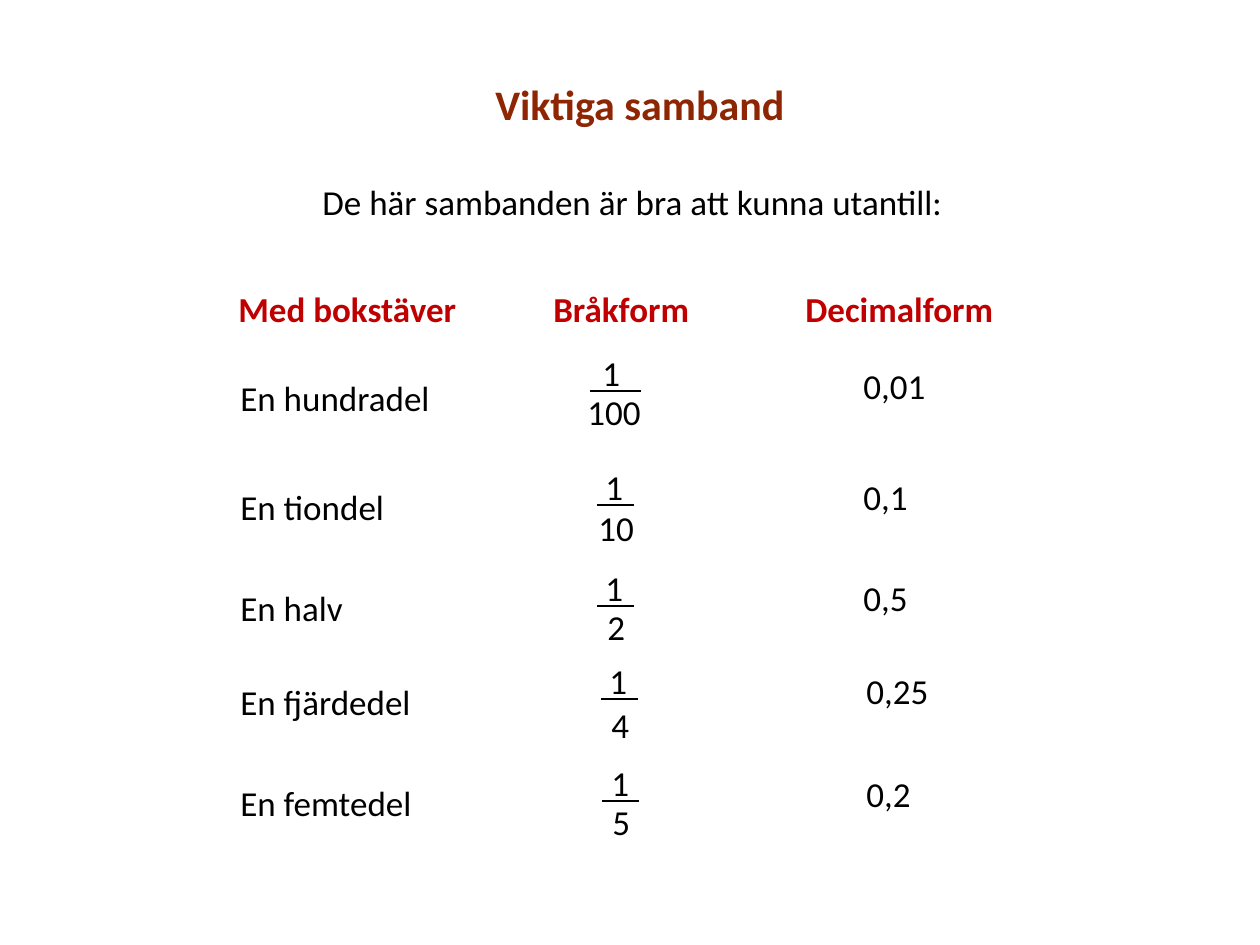
"""Build a slide relating words, fractions and decimals."""
from lxml.etree import SubElement
from pptx import Presentation
from pptx.dml.color import RGBColor
from pptx.enum.shapes import MSO_CONNECTOR
from pptx.enum.text import MSO_AUTO_SIZE
from pptx.oxml.ns import qn
from pptx.util import Inches, Pt

BLACK = RGBColor(0, 0, 0)
BROWN = RGBColor(0x8E, 0x25, 0x03)
RED = RGBColor(0xC0, 0, 0)
PX = Inches(1) / 126
TEXT_HEIGHT = 55
NAME_LEFT = 228
NUMERATOR_RISE = 46

HEADINGS = [
    ("Viktiga samband", (483, 72, 329, 63), 24, BROWN, True),
    ("De här sambanden är bra att kunna utantill:", (310, 174, 673, TEXT_HEIGHT), 20, BLACK, False),
    ("Med bokstäver\t\tBråkform \t\tDecimalform", (226, 281, 832, TEXT_HEIGHT), 20, RED, True),
]

# fmt: off
ROWS = [
    {"name": ("En hundradel", 370), "bar": (590, 391, 51), "numerator": ("1", 590),
     "denominator": ("100", 575, 384), "decimal": ("0,01", 851, 358)},
    {"name": ("En tiondel", 479), "bar": (597, 505, 37), "numerator": ("1", 593),
     "denominator": ("10", 586, 500), "decimal": ("0,1", 851, 469)},
    {"name": ("En halv", 580), "bar": (597, 606, 37), "numerator": ("1", 593),
     "denominator": ("2", 595, 599), "decimal": ("0,5", 851, 570)},
    {"name": ("En fjärdedel", 674), "bar": (601, 699, 37), "numerator": ("1", 597),
     "denominator": ("4", 599, 697), "decimal": ("0,25", 854, 663)},
    {"name": ("En femtedel", 775), "bar": (602, 801, 37), "numerator": ("1", 599),
     "denominator": ("5", 600, 794), "decimal": ("0,2", 854, 766)},
]
# fmt: on


def emu(*lengths):
    return [round(length * PX) for length in lengths]


def add_text(shapes, text, box, size=20, color=BLACK, bold=False):
    frame = shapes.add_textbox(*emu(*box)).text_frame
    frame.word_wrap = True
    frame.auto_size = MSO_AUTO_SIZE.SHAPE_TO_FIT_TEXT
    paragraph = frame.paragraphs[0]
    paragraph.text = text
    font = paragraph.font
    font.name, font.size, font.bold = "Calibri", Pt(size), bold
    font.color.rgb = color


def add_fraction(slide, numerator, denominator, bar):
    shapes = slide.shapes.add_group_shape().shapes
    left, top, width = bar
    text, text_left = numerator
    add_text(shapes, text, (text_left, top - NUMERATOR_RISE, 64, TEXT_HEIGHT))
    text, text_left, text_top = denominator
    add_text(shapes, text, (text_left, text_top, 96, TEXT_HEIGHT))
    line = shapes.add_connector(MSO_CONNECTOR.STRAIGHT, *emu(left, top, left + width, top))
    line.line.color.rgb = BLACK
    line.line.width = Pt(1.5)
    SubElement(line._element.spPr, qn("a:effectLst"))


def main():
    presentation = Presentation()
    presentation.slide_width, presentation.slide_height = Inches(10), Inches(7.5)
    slide = presentation.slides.add_slide(presentation.slide_layouts[6])
    for heading in HEADINGS:
        add_text(slide.shapes, *heading)
    for row in ROWS:
        name, top = row["name"]
        add_text(slide.shapes, name, (NAME_LEFT, top, 229, TEXT_HEIGHT))
        add_fraction(slide, row["numerator"], row["denominator"], row["bar"])
        decimal, left, top = row["decimal"]
        add_text(slide.shapes, decimal, (left, top, 96, TEXT_HEIGHT))
    presentation.save("out.pptx")


if __name__ == "__main__":
    main()
